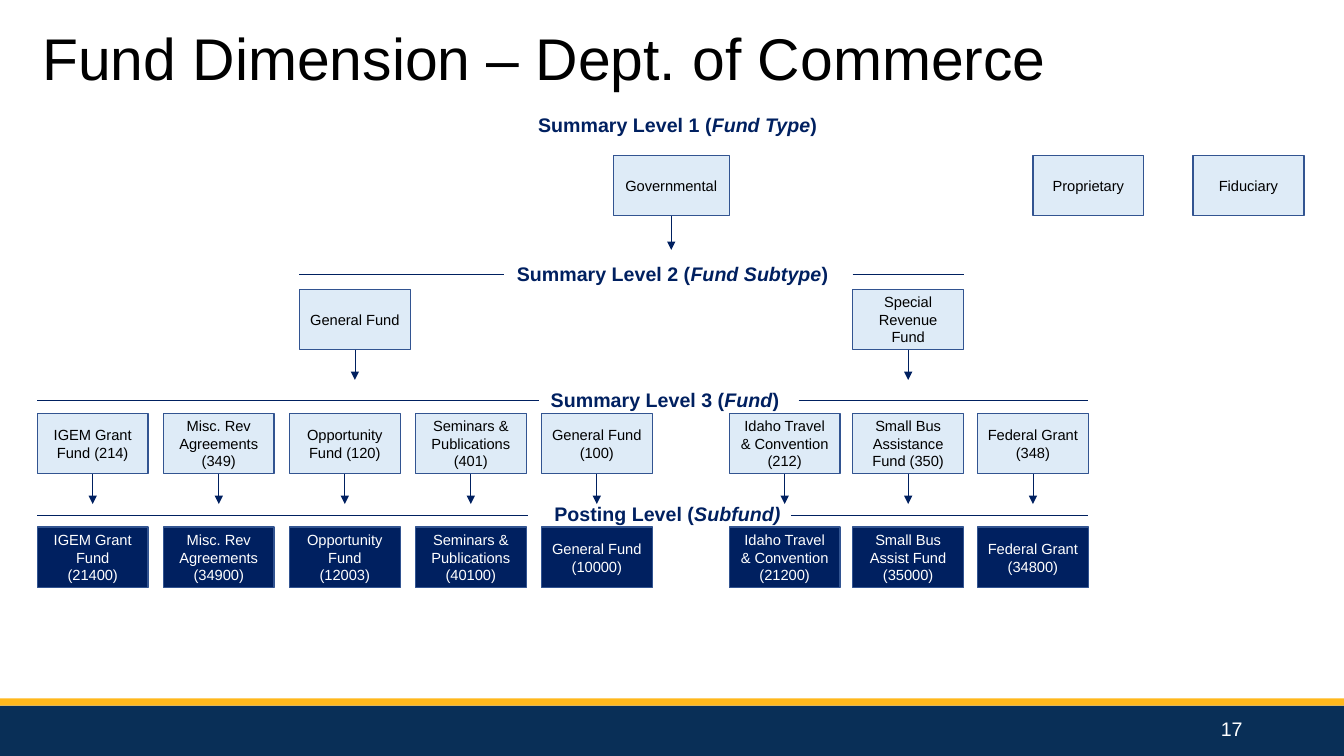
from lxml import etree
from pptx import Presentation
from pptx import util as u
from pptx.dml.color import RGBColor
from pptx.enum import shapes, text
from pptx.oxml.ns import qn

WIDTH, HEIGHT = 13.33, 7.5
MARGIN, COLUMN, ROW = 0.37, 1.25, 0.1
BOX_COLUMNS, BOX_ROWS = 0.88, 6
NAVY, PALE, EDGE, BLACK, WHITE = "002060", "DEEBF7", "325491", "000000", "FFFFFF"


def paint(target, color):
    """Give a fill a solid colour, or a font its colour."""
    if hasattr(target, "solid"):
        target.solid()
        target = target.fore_color
    else:
        target = target.color
    target.rgb = RGBColor.from_string(color)


class FundChart:
    """Draws on one slide; x counts grid columns from the margin, y counts rows."""

    def __init__(self, slide):
        self.slide = slide
        self.font = {"name": "Arial"}

    def x(self, column):
        return u.Inches(MARGIN + column * COLUMN)

    def y(self, row):
        return u.Inches(row * ROW)

    def set_text(self, frame, paragraphs, color, align, anchor, inset=0.1, **style):
        """Fill a frame with paragraphs, each a list of (text, extra format) runs."""
        layout = {"word_wrap": True, "auto_size": text.MSO_AUTO_SIZE.NONE,
                  "vertical_anchor": anchor,
                  "margin_left": u.Inches(inset), "margin_right": u.Inches(inset)}
        for key, value in layout.items():
            setattr(frame, key, value)
        for index, runs in enumerate(paragraphs):
            paragraph = frame.add_paragraph() if index else frame.paragraphs[0]
            paragraph.alignment = align
            for words, extra in runs:
                run = paragraph.add_run()
                run.text = words
                for key, value in {**self.font, **style, **extra}.items():
                    setattr(run.font, key, value)
                paint(run.font, color)

    def title(self, words):
        heading = self.slide.shapes.title
        place = {"left": 0.024, "top": 0.021, "width": 0.795, "height": 0.108}
        for key, share in place.items():
            whole = WIDTH if key in ("left", "width") else HEIGHT
            setattr(heading, key, u.Inches(share * whole))
        self.set_text(heading.text_frame, [[(words, {})]], BLACK,
                      text.PP_ALIGN.LEFT, text.MSO_ANCHOR.MIDDLE, size=u.Pt(42))

    def rectangle(self, left, top, width, height, color):
        block = self.slide.shapes.add_shape(
            shapes.MSO_SHAPE.RECTANGLE, left, top, width, height)
        block.shadow.inherit = False
        paint(block.fill, color)
        block.line.fill.background()
        return block

    def band(self, top, height, color):
        """Full-width strip, placed in rows."""
        self.rectangle(0, self.y(top), u.Inches(WIDTH), self.y(height), color)

    def box(self, column, row, lines, fill=PALE, color=BLACK, columns=BOX_COLUMNS):
        fund = self.rectangle(self.x(column), self.y(row), u.Inches(columns * COLUMN),
                              self.y(BOX_ROWS), fill)
        paint(fund.line.fill, EDGE)
        fund.line.width = u.Pt(1)
        self.set_text(fund.text_frame, [[(line, {})] for line in lines], color,
                      text.PP_ALIGN.CENTER, text.MSO_ANCHOR.MIDDLE, 0.09, size=u.Pt(10.5))

    def label(self, column, row, level, dimension, ending=")"):
        """Level heading, given by its left edge."""
        heading = self.slide.shapes.add_textbox(
            self.x(column), self.y(row), u.Inches(2.8 * COLUMN), self.y(4))
        runs = [(level + " (", {}), (dimension, {"italic": True})]
        if ending:
            runs.append((ending, {}))
        self.set_text(heading.text_frame, [runs], NAVY, text.PP_ALIGN.CENTER,
                      text.MSO_ANCHOR.TOP, size=u.Pt(14), bold=True)

    def line(self, start, end, arrow=False):
        link = self.slide.shapes.add_connector(
            shapes.MSO_CONNECTOR.STRAIGHT, self.x(start[0]), self.y(start[1]),
            self.x(end[0]), self.y(end[1]))
        paint(link.line.fill, NAVY)
        link.line.width = u.Pt(0.5)
        properties = link.element.spPr
        if arrow:
            etree.SubElement(properties.find(qn("a:ln")), qn("a:tailEnd"), type="triangle")
        etree.SubElement(properties, qn("a:effectLst"))

    def arrow_below(self, column, row, rows=3, columns=BOX_COLUMNS):
        """Arrow down from the box at this column and row."""
        middle, bottom = column + columns / 2, row + BOX_ROWS
        self.line((middle, bottom), (middle, bottom + rows), arrow=True)

    def page_number(self, number):
        footer = self.slide.shapes.add_textbox(
            u.Inches(0.707 * WIDTH), self.y(70.6), u.Inches(0.225 * WIDTH), self.y(4))
        self.set_text(footer.text_frame, [[(number, {})]], WHITE, text.PP_ALIGN.RIGHT,
                      text.MSO_ANCHOR.TOP, size=u.Pt(14))


TYPE_ROW, SUBTYPE_ROW, FUND_ROW, SUBFUND_ROW = 15.4, 28.7, 41, 52.3
GOVERNMENTAL_COLUMNS = 0.92
FUND_TYPES = [(4.57, "Governmental", GOVERNMENTAL_COLUMNS),
              (7.9, "Proprietary", BOX_COLUMNS), (9.17, "Fiduciary", BOX_COLUMNS)]
SUBTYPES = [(2.08, "General Fund"), (6.47, "Special Revenue Fund")]
FUNDS = [  # column, fund, subfund name, subfund code
    (0, "IGEM Grant Fund (214)", "IGEM Grant Fund", "(21400)"),
    (1, "Misc. Rev Agreements (349)", "Misc. Rev Agreements", "(34900)"),
    (2, "Opportunity Fund (120)", "Opportunity Fund", "(12003)"),
    (3, "Seminars & Publications (401)", "Seminars & Publications", "(40100)"),
    (4, "General Fund (100)", "General Fund", "(10000)"),
    (5.49, "Idaho Travel & Convention (212)", "Idaho Travel & Convention", "(21200)"),
    (6.47, "Small Bus Assistance Fund (350)", "Small Bus Assist Fund", "(35000)"),
    (7.46, "Federal Grant (348)", "Federal Grant", "(34800)"),
]
LABELS = [(3.68, 10.7, "Summary Level 1", "Fund Type"),
          (3.64, 25.5, "Summary Level 2", "Fund Subtype"),
          (3.58, 38, "Summary Level 3", "Fund"),
          (3.6, 49.3, "Posting Level", "Subfund)", "")]
RULES = [(27.2, 2.08, 3.7), (27.2, 6.47, 7.35), (39.7, 0, 3.98),
         (39.7, 6.04, 8.34), (51.1, 0, 3.89), (51.1, 5.98, 8.34)]


def main():
    deck = Presentation()
    deck.slide_width, deck.slide_height = u.Inches(WIDTH), u.Inches(HEIGHT)
    chart = FundChart(deck.slides.add_slide(deck.slide_layouts.get_by_name("Title Only")))

    chart.band(70, 5, "092F57")
    chart.band(69.3, 0.7, "FFB81C")
    chart.title("Fund Dimension – Dept. of Commerce")
    for label in LABELS:
        chart.label(*label)
    for row, start, end in RULES:
        chart.line((start, row), (end, row))

    for column, fund_type, columns in FUND_TYPES:
        chart.box(column, TYPE_ROW, [fund_type], columns=columns)
    chart.arrow_below(FUND_TYPES[0][0], TYPE_ROW, 3.4, GOVERNMENTAL_COLUMNS)
    for column, subtype in SUBTYPES:
        chart.box(column, SUBTYPE_ROW, [subtype])
        chart.arrow_below(column, SUBTYPE_ROW)
    for column, fund, subfund, code in FUNDS:
        chart.box(column, FUND_ROW, [fund])
        chart.arrow_below(column, FUND_ROW)
        chart.box(column, SUBFUND_ROW, [subfund, code], NAVY, WHITE)

    chart.page_number("17")
    deck.save("out.pptx")


if __name__ == "__main__":
    main()
